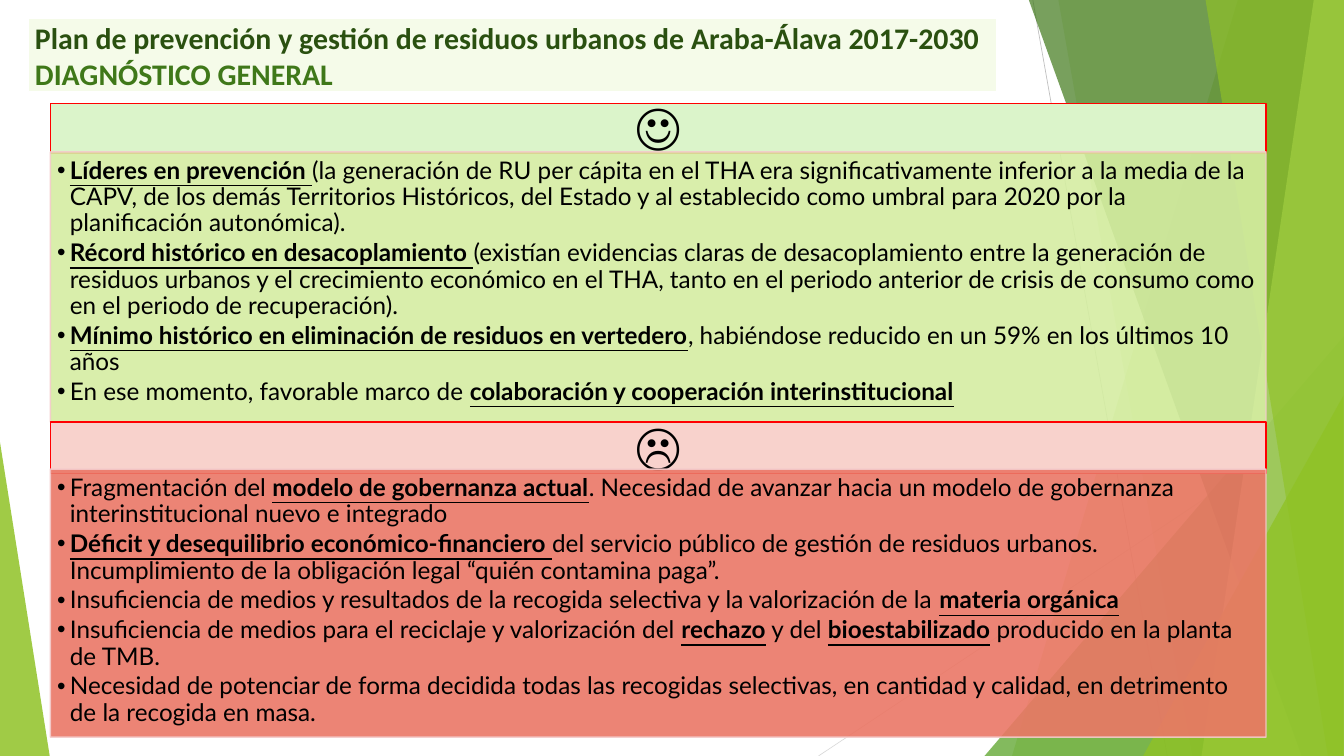
from pptx import Presentation
from pptx.dml.color import RGBColor
from pptx.enum.shapes import MSO_CONNECTOR, MSO_SHAPE
from pptx.enum.text import MSO_ANCHOR as Anchor, MSO_AUTO_SIZE as AutoSize, PP_ALIGN as Align
from pptx.oxml.ns import qn
from pptx.util import Inches, Pt
from lxml.etree import SubElement

WIDTH, HEIGHT = 20, 11.25
BLACK = "000000"

STRENGTHS = [
    "*Líderes en prevención *(la generación de RU per cápita en el THA era significativamente inferior "
    "a la media de la CAPV, de los demás Territorios Históricos, del Estado y al establecido como "
    "umbral para 2020 por la planificación autonómica).",
    "*Récord histórico en desacoplamiento *(existían evidencias claras de desacoplamiento entre la "
    "generación de residuos urbanos y el crecimiento económico en el THA, tanto en el periodo anterior "
    "de crisis de consumo como en el periodo de recuperación).",
    "*Mínimo histórico en eliminación de residuos en vertedero*, habiéndose reducido en un 59% en los "
    "últimos 10 años",
    "En ese momento, favorable marco de *colaboración y cooperación interinstitucional*",
]
WEAKNESSES = [
    "Fragmentación del *modelo de gobernanza actual*. Necesidad de avanzar hacia un modelo de "
    "gobernanza interinstitucional nuevo e integrado",
    "*Déficit y desequilibrio económico-financiero *del servicio público de gestión de residuos "
    "urbanos. Incumplimiento de la obligación legal “quién contamina paga”.",
    "Insuficiencia de medios y resultados de la recogida selectiva y la valorización de la "
    "*materia orgánica*",
    "Insuficiencia de medios para el reciclaje y valorización del *rechazo* y del *bioestabilizado* "
    "producido en la planta de TMB.",
    "Necesidad de potenciar de forma decidida todas las recogidas selectivas, en cantidad y calidad, "
    "en detrimento de la recogida en masa.",
]


def rgb(color):
    """Turn a hex string into a colour."""
    return RGBColor.from_string(color)


def paint(fill, color, opacity=100):
    """Give a fill a solid colour with an opacity in percent."""
    fill.solid()
    fill.fore_color.rgb = rgb(color)
    if opacity < 100:
        srgb = fill._xPr.find(qn("a:solidFill"))[0]
        SubElement(srgb, qn("a:alpha"), val=str(opacity * 1000))


def outline(shape, color, width, opacity=100):
    """Give a shape a solid outline."""
    shape.line.width = Pt(width)
    paint(shape.line.fill, color, opacity)


def place(shape, box):
    """Move a shape to a box given in inches."""
    shape.left, shape.top, shape.width, shape.height = map(Inches, box)


def set_insets(frame, left, top, right, bottom):
    """Set the four text margins and turn wrapping on."""
    frame.word_wrap = True
    frame.auto_size = AutoSize.NONE
    frame.margin_left, frame.margin_top = Inches(left), Inches(top)
    frame.margin_right, frame.margin_bottom = Inches(right), Inches(bottom)


def style(run, font, size, color, bold=False, underline=False):
    """Format one run of text."""
    run.font.name, run.font.size = font, Pt(size)
    run.font.bold, run.font.underline = bold, underline
    run.font.color.rgb = rgb(color)


def add_facets(slide, box):
    """Draw the green facets and thin lines at the slide edges."""
    left, top, width, height = box
    right, bottom = left + width, top + height

    def hairline(x1, y1, x2, y2, color):
        line = slide.shapes.add_connector(
            MSO_CONNECTOR.STRAIGHT, *map(Inches, (left + x1, top + y1, left + x2, top + y2)))
        outline(line, color, 0.75)
        SubElement(line._element.spPr, qn("a:effectLst"))

    def finish(facet, color, opacity):
        facet.shadow.inherit = False
        paint(facet.fill, color, opacity)
        facet.line.fill.background()

    def band(top_x, bottom_x, color, opacity):
        corners = [(right, top), (right, bottom), (left + bottom_x, bottom)]
        builder = slide.shapes.build_freeform(Inches(left + top_x), Inches(top))
        builder.add_line_segments([(Inches(x), Inches(y)) for x, y in corners], close=True)
        finish(builder.convert_to_shape(), color, opacity)

    def wedge(x, wedge_width, wedge_height, apex, color, opacity):
        facet = slide.shapes.add_shape(MSO_SHAPE.ISOSCELES_TRIANGLE, *map(
            Inches, (left + x, bottom - wedge_height, wedge_width, wedge_height)))
        facet.adjustments[0] = apex
        finish(facet, color, opacity)

    hairline(15.37, 0, 17.37, height, "BFBFBF")
    hairline(width, 6.04, 12.18, height, "D9D9D9")
    band(18.42, 15.06, "90C226", 30)
    band(15.75, 17.74, "90C226", 20)
    wedge(14.65, 5.35, 6.25, 1, "54A021", 72)
    band(15.31, 19.37, "3F7819", 70)
    band(19.55, 17.88, "C0E474", 70)
    band(17.94, 19.76, "90C226", 65)
    wedge(17.01, 2.98, 5.36, 1, "90C226", 80)
    wedge(0, 0.74, 4.67, 0, "90C226", 85)


def add_heading(slide, box):
    """Fill the title placeholder with the plan name and section."""
    title = slide.shapes.title
    slide.shapes._spTree.append(title._element)
    place(title, box)
    paint(title.fill, "F5FBE9")
    outline(title, "FFFFFF", 0.75)
    frame = title.text_frame
    set_insets(frame, 0.1, 0, 0, 0)
    frame.vertical_anchor = Anchor.BOTTOM
    frame.text = ("Plan de prevención y gestión de residuos urbanos de Araba-Álava 2017-2030\n"
                  "DIAGNÓSTICO GENERAL")
    for paragraph, color in zip(frame.paragraphs, ("2A5010", "3F7819")):
        paragraph.alignment = Align.LEFT
        style(paragraph.runs[0], "Calibri", 32, color, bold=True)


def add_face_bar(slide, box, face, color):
    """Draw the bar that carries the face of a panel."""
    bar = slide.shapes.add_shape(MSO_SHAPE.RECTANGLE, *map(Inches, box))
    bar.shadow.inherit = False
    paint(bar.fill, color)
    outline(bar, "FF0000", 1.5)
    frame = bar.text_frame
    set_insets(frame, 0.14, 0.08, 0.14, 0.08)
    frame.vertical_anchor = Anchor.MIDDLE
    frame.text = face
    paragraph = frame.paragraphs[0]
    paragraph.alignment, paragraph.line_spacing = Align.CENTER, 0.9
    style(paragraph.runs[0], "Lato", 54, BLACK)


def add_findings(slide, body, box, findings, color):
    """Fill a body placeholder with bullets; asterisks mark the key phrases."""
    slide.shapes._spTree.append(body._element)
    place(body, box)
    paint(body.fill, color, 90)
    outline(body, "F4CBCB", 1.5, 90)
    frame = body.text_frame
    set_insets(frame, 0.1, 0.1, 0.14, 0.16)
    frame.vertical_anchor = Anchor.TOP
    frame.text = "\n".join(findings)
    for paragraph, finding in zip(frame.paragraphs, findings):
        paragraph.text = ""
        paragraph.alignment, paragraph.line_spacing = Align.LEFT, 0.9
        paragraph.space_before, paragraph.space_after = Pt(0), Pt(4)
        properties = paragraph._p.get_or_add_pPr()
        properties.set("marL", str(Inches(0.19)))
        properties.set("indent", str(-Inches(0.19)))
        SubElement(properties, qn("a:buChar"), char="•")
        for index, phrase in enumerate(finding.split("*")):
            if phrase:
                run = paragraph.add_run()
                run.text = phrase
                key = index % 2 == 1
                style(run, "Lato", 26, BLACK, bold=key, underline=key)


def add_panel(slide, body, box, bar_height, overlap, face, findings, bar_color, body_color):
    """Place a face bar with its list of findings below it."""
    left, top, width, height = box
    body_top = bar_height - overlap
    add_face_bar(slide, (left, top, width, bar_height), face, bar_color)
    add_findings(slide, body, (left, top + body_top, width, height - body_top), findings, body_color)


def main():
    """Build the diagnosis slide."""
    deck = Presentation()
    deck.slide_width, deck.slide_height = Inches(WIDTH), Inches(HEIGHT)
    slide = deck.slides.add_slide(deck.slide_layouts[3])
    _, strengths, weaknesses = slide.placeholders
    add_facets(slide, (0, 0, WIDTH, HEIGHT))
    add_panel(slide, strengths, (0.75, 1.54, 18.09, 4.74), 0.74, 0.02, "☺", STRENGTHS,
              "DBF4CA", "D5EDA2")
    add_panel(slide, weaknesses, (0.75, 6.28, 18.09, 4.69), 0.77, 0.07, "☹", WEAKNESSES,
              "F8D2CC", "EB7766")
    add_heading(slide, (0.42, 0.28, 14.4, 1.08))
    deck.save("out.pptx")


if __name__ == "__main__":
    main()
